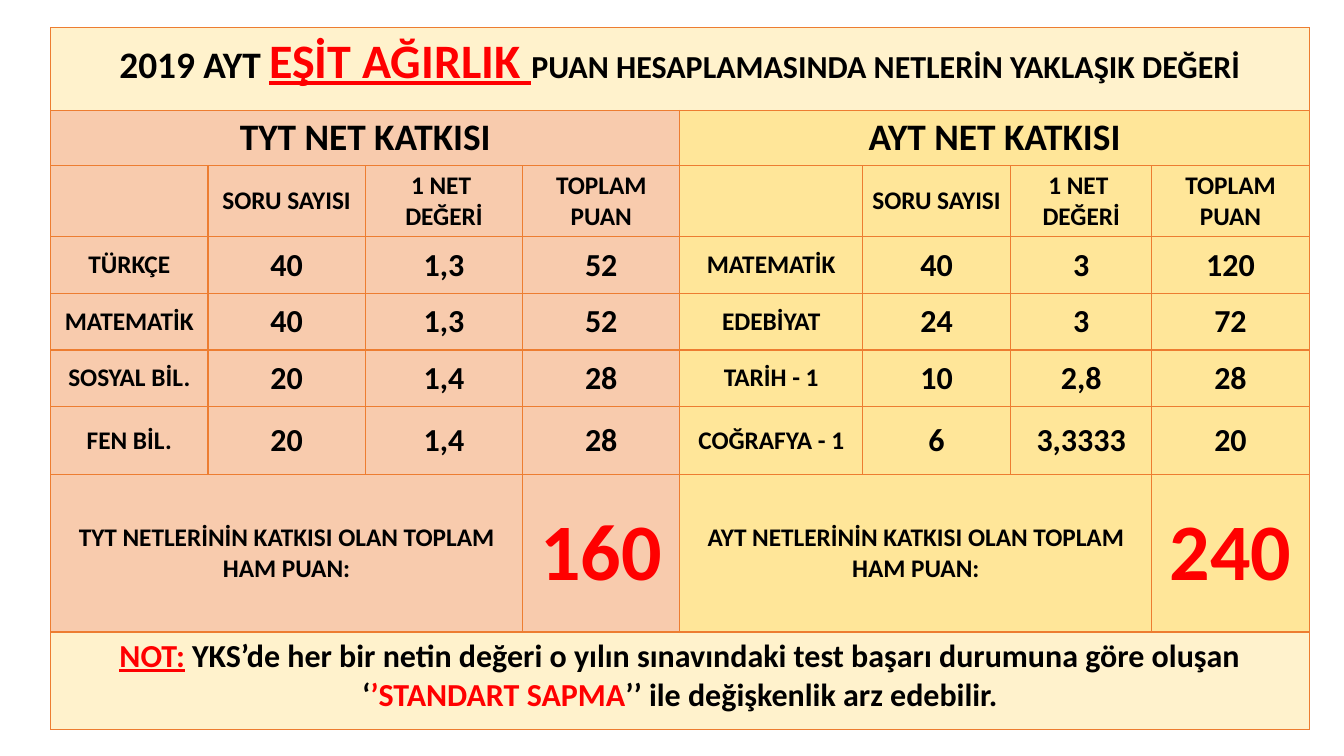
from lxml import etree
from pptx import Presentation
from pptx.dml.color import RGBColor
from pptx.enum.text import MSO_ANCHOR as Anchor, PP_ALIGN as Align
from pptx.oxml.ns import qn
from pptx.util import Pt

BLACK = RGBColor(0x00, 0x00, 0x00)
RED = RGBColor(0xFF, 0x00, 0x00)
ORANGE = RGBColor(0xED, 0x7D, 0x31)
CREAM = RGBColor(0xFF, 0xF2, 0xCC)
PEACH = RGBColor(0xF8, 0xCB, 0xAD)
YELLOW = RGBColor(0xFF, 0xE6, 0x99)

TITLE = [
    ("2019 AYT ", {"size": Pt(28)}),
    ("EŞİT AĞIRLIK ", {"size": Pt(36), "underline": True, "color": RED}),
    ("PUAN HESAPLAMASINDA NETLERİN YAKLAŞIK DEĞERİ", {"size": Pt(24)}),
]
NOTE = [
    ("NOT:", {"size": Pt(24), "underline": True, "color": RED}),
    (" YKS’de her bir netin değeri o yılın sınavındaki test başarı durumuna göre oluşan ‘",
     {"size": Pt(24)}),
    ("’STANDART SAPMA", {"size": Pt(24), "color": RED}),
    ("’’ ile değişkenlik arz edebilir.", {"size": Pt(24)}),
]
HEADERS = ["", "SORU SAYISI", "1 NET \nDEĞERİ", "TOPLAM PUAN"]
EXAMS = [
    {
        "name": "TYT", "fill": PEACH, "total": "160",
        "subjects": [
            ("TÜRKÇE", "40", "1,3", "52"),
            ("MATEMATİK", "40", "1,3", "52"),
            ("SOSYAL BİL.", "20", "1,4", "28"),
            ("FEN BİL.", "20", "1,4", "28"),
        ],
    },
    {
        "name": "AYT", "fill": YELLOW, "total": "240",
        "subjects": [
            ("MATEMATİK", "40", "3", "120"),
            ("EDEBİYAT", "24", "3", "72"),
            ("TARİH - 1", "10", "2,8", "28"),
            ("COĞRAFYA - 1", "6", "3,3333", "20"),
        ],
    },
]
COLUMN_WIDTHS = [118, 118, 118, 118, 137, 111, 106, 118]
ROW_HEIGHTS = [62, 39, 50.4, 42.4, 42.4, 42.4, 51, 118, 73.4]
TOTAL_ROW, NOTE_ROW = 7, 8
EXAM_COLUMNS = len(HEADERS)

presentation = Presentation()
presentation.slide_width, presentation.slide_height = Pt(1008), Pt(566.64)
slide = presentation.slides.add_slide(presentation.slide_layouts[6])
table = slide.shapes.add_table(
    len(ROW_HEIGHTS), len(COLUMN_WIDTHS), Pt(38), Pt(20.8),
    Pt(sum(COLUMN_WIDTHS)), Pt(sum(ROW_HEIGHTS)),
).table
table.first_row = table.horz_banding = False
for column, width in zip(table.columns, COLUMN_WIDTHS):
    column.width = Pt(width)
for row, height in zip(table.rows, ROW_HEIGHTS):
    row.height = Pt(height)


def style_cell(cell, fill):
    properties = cell._tc.get_or_add_tcPr()
    for side in ("a:lnL", "a:lnR", "a:lnT", "a:lnB"):
        line = etree.SubElement(properties, qn(side), w=str(Pt(1)))
        solid = etree.SubElement(line, qn("a:solidFill"))
        etree.SubElement(solid, qn("a:srgbClr"), val=str(ORANGE))
    cell.fill.solid()
    cell.fill.fore_color.rgb = fill


def write_runs(paragraph, runs):
    paragraph.alignment = Align.CENTER
    for text, changes in runs:
        run = paragraph.add_run()
        run.text = text
        values = {"name": "Calibri", "bold": True, "color": BLACK} | changes
        run.font.color.rgb = values.pop("color")
        for attribute, value in values.items():
            setattr(run.font, attribute, value)


def write_cell(row, column, text, size, color=BLACK, span=1, anchor=Anchor.MIDDLE):
    cell = table.cell(row, column)
    cell.vertical_anchor = anchor
    if span > 1:
        cell.merge(table.cell(row, column + span - 1))
    for index, line in enumerate(text.split("\n") if text else []):
        frame = cell.text_frame
        paragraph = frame.add_paragraph() if index else frame.paragraphs[0]
        write_runs(paragraph, [(line, {"size": Pt(size), "color": color})])


for row in range(len(ROW_HEIGHTS)):
    for column in range(len(COLUMN_WIDTHS)):
        exam_fill = EXAMS[column // EXAM_COLUMNS]["fill"]
        style_cell(table.cell(row, column), CREAM if row in (0, NOTE_ROW) else exam_fill)

for row, runs in ((0, TITLE), (NOTE_ROW, NOTE)):
    banner = table.cell(row, 0)
    banner.merge(table.cell(row, len(COLUMN_WIDTHS) - 1))
    write_runs(banner.text_frame.paragraphs[0], runs)

for number, exam in enumerate(EXAMS):
    first = number * EXAM_COLUMNS
    last = first + EXAM_COLUMNS - 1
    name = exam["name"]
    write_cell(1, first, f"{name} NET KATKISI", 28, span=EXAM_COLUMNS, anchor=Anchor.TOP)
    for offset, header in enumerate(HEADERS):
        write_cell(2, first + offset, header, 19)
    for row, subject in enumerate(exam["subjects"], start=3):
        for offset, text in enumerate(subject):
            write_cell(row, first + offset, text, 24 if offset else 19)
    write_cell(TOTAL_ROW, first, f"{name} NETLERİNİN KATKISI OLAN TOPLAM HAM PUAN:", 19,
               span=EXAM_COLUMNS - 1)
    write_cell(TOTAL_ROW, last, exam["total"], 60, RED)

presentation.save("out.pptx")
